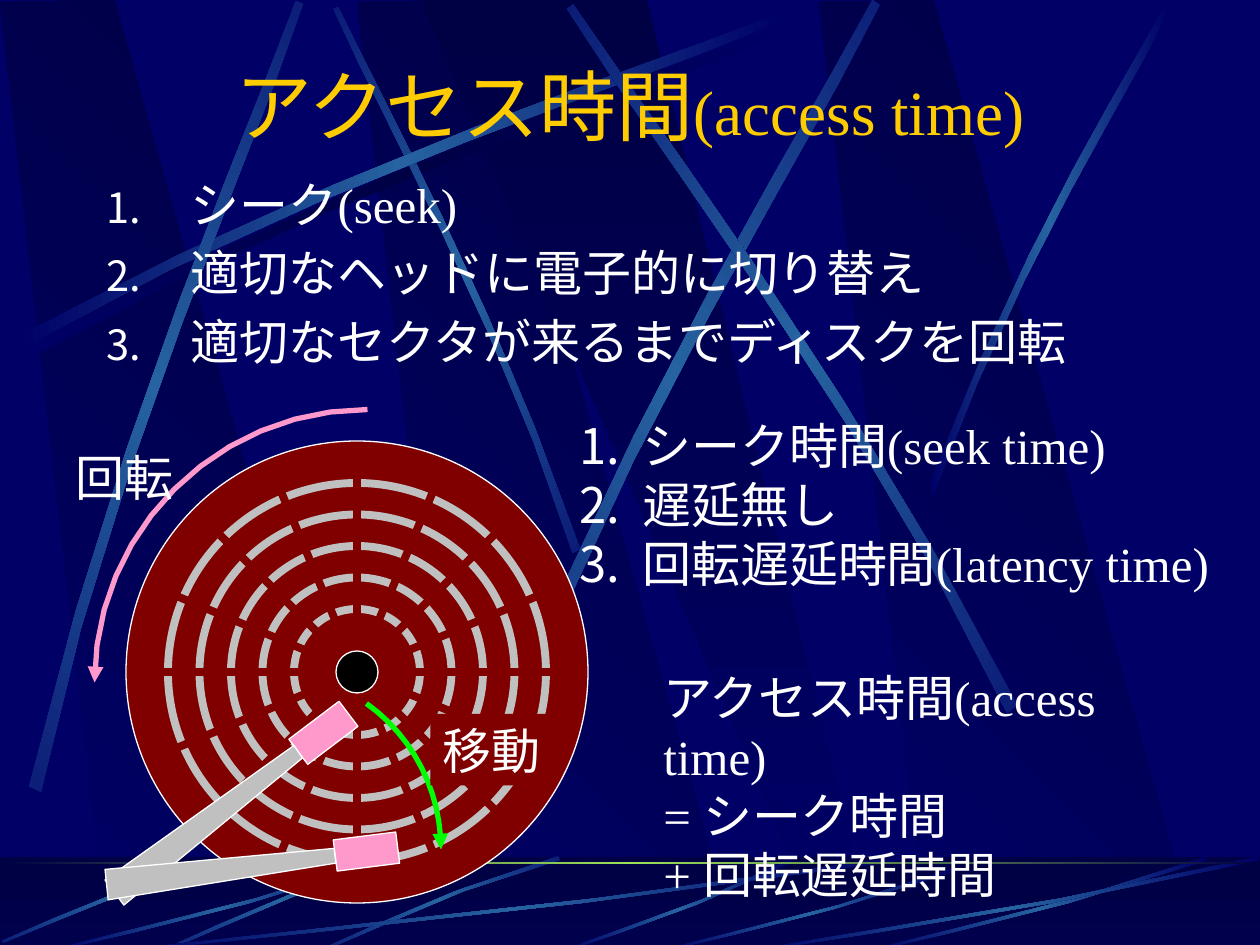
"""Builds a slide that explains disk access time."""
from dataclasses import dataclass

from pptx import Presentation
from pptx.dml.color import RGBColor
from pptx.enum.shapes import MSO_CONNECTOR, MSO_SHAPE
from pptx.enum.text import MSO_ANCHOR, PP_ALIGN
from pptx.oxml.ns import qn
from pptx.oxml.xmlchemy import OxmlElement
from pptx.util import Emu, Pt

RECT = MSO_SHAPE.RECTANGLE
OVAL = MSO_SHAPE.OVAL
STRAIGHT = MSO_CONNECTOR.STRAIGHT
MIDDLE = MSO_ANCHOR.MIDDLE
TOP = MSO_ANCHOR.TOP
LEFT = PP_ALIGN.LEFT
CENTER = PP_ALIGN.CENTER

PX = 7620
WIDTH, HEIGHT = 1200, 900


@dataclass(frozen=True)
class Theme:
    font: str = "Times New Roman"
    navy: str = "000066"
    dusk: str = "00004D"
    night: str = "000044"
    streak: str = "2663A0"
    horizon: str = "9CE157"
    gold: str = "FFCC00"
    white: str = "FFFFFF"
    black: str = "000000"
    disk: str = "800000"
    silver: str = "C0C0C0"
    pink: str = "FF99CC"
    green: str = "00FF00"
    title: int = 44
    subtitle: int = 36
    body: int = 28
    hairline: float = 0.75
    arrow: float = 3
    track: float = 4.5


def add_child(parent, tag, **attributes):
    child = OxmlElement(tag)
    for name, value in attributes.items():
        child.set(name, str(value))
    parent.append(child)
    return child


def curve(start, first, second, end, steps):
    return [
        tuple((1 - t) ** 3 * a + 3 * (1 - t) ** 2 * t * b + 3 * (1 - t) * t * t * c + t ** 3 * d
              for a, b, c, d in zip(start, first, second, end))
        for t in (step / steps for step in range(steps + 1))
    ]


def fit(points, size, area, flip=False):
    left, top, width, height = area
    return [
        (left + width * (1 - x / size[0] if flip else x / size[0]), top + height * y / size[1])
        for x, y in points
    ]


class Painter:
    def __init__(self, page, theme):
        self.page = page
        self.theme = theme

    def emu(self, *lengths):
        return [Emu(round(length * PX)) for length in lengths]

    def paint(self, shape, fill=None, line=None, weight=None):
        shape.shadow.inherit = False
        if fill:
            shape.fill.solid()
            shape.fill.fore_color.rgb = RGBColor.from_string(fill)
        else:
            shape.fill.background()
        if line:
            shape.line.color.rgb = RGBColor.from_string(line)
            shape.line.width = Pt(weight or self.theme.hairline)
        else:
            shape.line.fill.background()
        return shape

    def gradient(self, shape, colors, angle=0):
        shape.fill.gradient()
        shape.fill.gradient_angle = angle
        stops = shape._element.spPr.find(qn("a:gradFill")).find(qn("a:gsLst"))
        for stop in list(stops):
            stops.remove(stop)
        for index, color in enumerate(colors):
            stop = add_child(stops, "a:gs", pos=index * 100000 // (len(colors) - 1))
            add_child(stop, "a:srgbClr", val=color)

    def shape(self, kind, area, fill=None, line=None, weight=None, turn=0):
        shape = self.page.shapes.add_shape(kind, *self.emu(*area))
        shape.rotation = turn
        return self.paint(shape, fill, line, weight)

    def outline(self, points, fill=None, line=None, weight=None, close=True):
        start, *others = [self.emu(*point) for point in points]
        builder = self.page.shapes.build_freeform(*start)
        builder.add_line_segments(others, close=close)
        return self.paint(builder.convert_to_shape(), fill, line, weight)

    def beam(self, points, colors, angle):
        self.gradient(self.outline(points), colors, angle)

    def streak(self, area, turn=0, flip=False, color=None, steps=3):
        theme = self.theme
        points = curve((0, 257), (264, 115), (504, 41), (606, 0), steps)
        points += curve((608, 6), (508, 51), (234, 133), (3, 267), steps)
        shape = self.outline(fit(points, (608, 267), area, flip))
        shape.rotation = turn
        self.gradient(shape, (theme.navy, color or theme.streak, theme.navy))

    def line(self, start, end, color, weight):
        line = self.page.shapes.add_connector(STRAIGHT, *self.emu(*start, *end))
        line.line.color.rgb = RGBColor.from_string(color)
        line.line.width = Pt(weight)
        add_child(line._element.spPr, "a:effectLst")

    def arrow(self, points, color):
        shape = self.outline(curve(*points, 12), line=color, weight=self.theme.arrow, close=False)
        add_child(shape.line._get_or_add_ln(), "a:tailEnd", type="triangle")

    def text(self, area, lines, color=None, align=LEFT, anchor=TOP, wrap=True,
             indent=0, bullet=100, gap=0, fill=None):
        theme = self.theme
        box = self.page.shapes.add_textbox(*self.emu(*area))
        if fill:
            self.paint(box, fill)
        frame = box.text_frame
        frame.word_wrap = wrap
        frame.vertical_anchor = anchor
        for index, spans in enumerate(lines):
            para = frame.add_paragraph() if index else frame.paragraphs[0]
            para.alignment = align
            if index and gap:
                para.space_before = Pt(gap)
            if indent:
                props = para._p.get_or_add_pPr()
                props.set("marL", str(indent * PX))
                props.set("indent", str(-indent * PX))
                add_child(props, "a:buSzPct", val=bullet * 1000)
                add_child(props, "a:buAutoNum", type="arabicPeriod")
            para.font.name = theme.font
            para.font.color.rgb = RGBColor.from_string(color or theme.white)
            if isinstance(spans, str):
                para.font.size = Pt(theme.body)
                spans = [(spans, None)]
            for words, size in spans:
                span = para.add_run()
                span.text = words
                if size:
                    span.font.size = Pt(size)


def draw_backdrop(painter):
    theme = painter.theme
    for left in (340, 0, 780):
        corners = [(left + 103, 900), (left + 362, 900), (left + 109, 0), (left, 2)]
        painter.beam(corners, (theme.navy, theme.night), 45)
    painter.beam([(400, 0), (790, 900), (833, 900), (616, 0)], (theme.night, theme.navy), 270)
    for area, turn, flip, color in (
        ((24, 22, 730, 320), 0, False, theme.night),
        ((169, 162, 530, 210), 45, True, None),
        ((17, 12, 730, 320), 0, False, None),
        ((-205, 218, 730, 320), 311.7, False, None),
        ((277, 192, 749, 361), 321.6, False, None),
        ((388, 182, 730, 320), 34.7, True, None),
        ((886, 0, 227, 476), 0, False, None),
    ):
        painter.streak(area, turn, flip, color, steps=6)

    floor = painter.shape(RECT, (0, 816, WIDTH, HEIGHT - 816))
    painter.gradient(floor, (theme.night, theme.dusk), 270)
    for area in ((310, 811, 221, 100), (160, 811, 221, 100), (6, 805, 216, 102)):
        painter.streak(area, 315, True)
    for left, top, width in ((538, 818, 216), (120, 816, 740), (50, 816, 320),
                             (632, 827, 277), (830, 816, 320), (720, 816, 480)):
        painter.streak((left, top, width, 906 - top), 180)
    horizon = painter.shape(RECT, (0, 821, WIDTH, 2))
    painter.gradient(horizon, (theme.night, theme.horizon, theme.night))


def draw_disk(painter):
    theme = painter.theme
    x, y = 340, 640

    def circle(radius, **style):
        painter.shape(OVAL, (x - radius, y - radius, 2 * radius, 2 * radius), **style)

    circle(220, fill=theme.disk, line=theme.white)
    for radius in range(60, 181, 30):
        circle(radius, line=theme.silver, weight=theme.track)
    for dx, dy in ((0, 210), (80, 190), (150, 150), (190, 80),
                   (205, 0), (190, -80), (150, -150), (80, -190)):
        painter.line((x + dx, y - dy), (x - dx, y + dy), theme.disk, theme.track)
    circle(20, fill=theme.black, line=theme.white)

    for head, turn, arm in (
        ((293, 668, 30, 60), 52.9, [(100, 838), (280, 710), (288, 722), (118, 862)]),
        ((334, 781, 30, 60), 82.8, [(100, 828), (318, 808), (320, 822), (103, 857)]),
    ):
        painter.shape(RECT, head, theme.pink, theme.white, turn=turn)
        painter.outline(arm, theme.silver, theme.white)
    painter.arrow([(349, 670), (394, 702), (420, 754), (420, 809)], theme.green)
    painter.text((410, 680, 118, 68), ["移動"], wrap=False, fill=theme.disk)
    painter.arrow([(350, 390), (206, 390), (90, 506), (90, 650)], theme.pink)
    painter.text((60, 420, 118, 68), ["回転"], wrap=False)


def main():
    theme = Theme()
    deck = Presentation()
    deck.slide_width, deck.slide_height = Emu(WIDTH * PX), Emu(HEIGHT * PX)
    page = deck.slides.add_slide(deck.slide_layouts[6])
    page.background.fill.solid()
    page.background.fill.fore_color.rgb = RGBColor.from_string(theme.navy)
    painter = Painter(page, theme)

    draw_backdrop(painter)
    title = [("アクセス時間", theme.title), ("(access time)", theme.subtitle)]
    painter.text((90, 50, 1020, 100), [title], theme.gold, CENTER, MIDDLE)
    steps = ["シーク(seek)", "適切なヘッドに電子的に切り替え", "適切なセクタが来るまでディスクを回転"]
    painter.text((90, 160, 1020, 260), steps, indent=80, bullet=85, gap=5.6)
    draw_disk(painter)
    times = ["シーク時間(seek time)", "遅延無し", "回転遅延時間(latency time)"]
    painter.text((540, 390, 624, 180), times, indent=60)
    total = ["アクセス時間(access time)", "= シーク時間", "+ 回転遅延時間"]
    painter.text((620, 630, 526, 180), total)
    deck.save("out.pptx")


if __name__ == "__main__":
    main()
